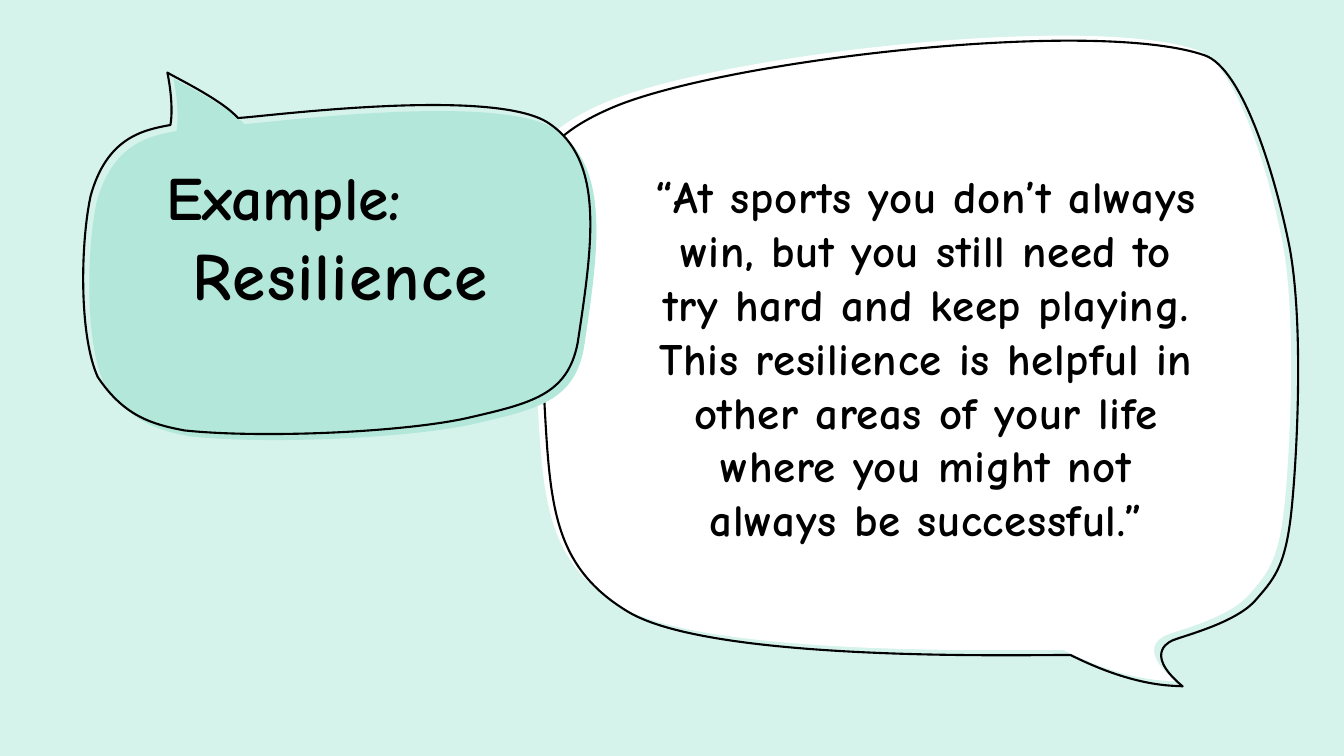
from dataclasses import dataclass
from math import cos, radians, sin

from lxml.etree import SubElement
from pptx import Presentation
from pptx.dml.color import RGBColor
from pptx.enum.text import MSO_ANCHOR, PP_ALIGN
from pptx.oxml.ns import qn
from pptx.util import Inches, Pt


@dataclass(frozen=True)
class Theme:
    font: str = "Comic Neue"
    ink: RGBColor = RGBColor(0, 0, 0)
    backdrop: RGBColor = RGBColor(0xD5, 0xF2, 0xEB)
    paper: RGBColor = RGBColor(255, 255, 255)
    mint: RGBColor = RGBColor(0xB2, 0xE7, 0xDA)
    label_size: int = 44
    title_size: int = 48
    quote_size: int = 32
    outline: float = 1.5


theme = Theme()

# Grid: square cells, 13.33 columns by 7.5 rows
CELL = Inches(1)
COLUMNS, ROWS = 13.33, 7.5

# Bubble outlines: a start point, then two handles and an end point per curve
QUOTE_BUBBLE = [
    (11.57, 6.3),
    (11.7, 6.25), (12.17, 6.13), (12.37, 5.92),
    (12.56, 5.7), (12.68, 5.59), (12.74, 5.01),
    (12.8, 4.42), (12.86, 3.15), (12.72, 2.4),
    (12.57, 1.65), (12.25, 0.63), (11.88, 0.5),
    (10.79, 0.12), (7.09, 0.55), (6, 1.02),
    (4.9, 1.49), (5.2, 2.06), (5.29, 3.31),
    (5.4, 4.74), (5.28, 5.49), (6.16, 6.02),
    (7.03, 6.54), (10.32, 6.44), (10.55, 6.45),
    (11.21, 6.78), (11.59, 6.75), (11.66, 6.76),
    (11.24, 6.41), (11.57, 6.3), (11.57, 6.3),
]
TITLE_BUBBLE = [
    (1.72, 0.78),
    (1.8, 0.83), (2.26, 1.05), (2.42, 1.23),
    (2.58, 1.23), (4.94, 0.91), (5.5, 1.28),
    (6.06, 1.65), (5.94, 2.47), (5.79, 3.46),
    (5.69, 3.98), (5.33, 4.06), (4.68, 4.21),
    (4.03, 4.35), (2.65, 4.41), (1.89, 4.33),
    (1.57, 4.27), (1.29, 4.19), (1.03, 3.8),
    (0.84, 3.38), (0.86, 2.46), (0.96, 2),
    (1.12, 1.43), (1.47, 1.35), (1.75, 1.3),
    (1.75, 1.3), (1.79, 1.13), (1.72, 0.78),
]


def add_bubble(page, curves, frame, tilt, fill, shift):
    """Draw a filled bubble in a tilted frame, then its ink outline moved by shift."""
    left, top, width, height = frame
    wide, high = int(width * CELL), int(height * CELL)
    turn = radians(-tilt)

    for color, (right, down) in ((fill, (0, 0)), (None, shift)):
        builder = page.shapes.build_freeform(0, 0)
        builder.add_line_segments([(wide, 0), (wide, high), (0, high)])
        bubble = builder.convert_to_shape(int((left + right) * CELL), int((top + down) * CELL))
        bubble.rotation = tilt
        bubble.shadow.inherit = False

        # Replace the frame's straight sides by curves, turned back into the frame
        contour = bubble._element.find(".//" + qn("a:path"))
        for side in list(contour):
            contour.remove(side)
        for index, (x, y) in enumerate(curves):
            if index == 0:
                segment = SubElement(contour, qn("a:moveTo"))
            elif index % 3 == 1:
                segment = SubElement(contour, qn("a:cubicBezTo"))
            across, along = x - left - width / 2, y - top - height / 2
            point = SubElement(segment, qn("a:pt"))
            point.set("x", str(int((across * cos(turn) - along * sin(turn) + width / 2) * CELL)))
            point.set("y", str(int((across * sin(turn) + along * cos(turn) + height / 2) * CELL)))
        SubElement(contour, qn("a:close"))

        if color is None:
            bubble.fill.background()
            bubble.line.color.rgb = theme.ink
            bubble.line.width = Pt(theme.outline)
        else:
            bubble.fill.solid()
            bubble.fill.fore_color.rgb = color
            bubble.line.fill.background()


def add_words(page, words, cells, size, align, anchor, spacing=0, before=0):
    """Write one bold paragraph in a box given in grid cells."""
    box = page.shapes.add_textbox(*(int(cell * CELL) for cell in cells))
    box.text_frame.word_wrap = True
    box.text_frame.vertical_anchor = anchor
    paragraph = box.text_frame.paragraphs[0]
    paragraph.alignment = align
    paragraph.space_before = Pt(before)
    paragraph.font.name = theme.font
    paragraph.font.size = Pt(size)
    paragraph.font.bold = True
    paragraph.font.color.rgb = theme.ink
    span = paragraph.add_run()
    span.text = words
    # Letter spacing is held in hundredths of a point
    span.font._element.set("spc", str(int(spacing * 100)))


# Page and background
deck = Presentation()
deck.slide_width, deck.slide_height = int(COLUMNS * CELL), int(ROWS * CELL)
page = deck.slides.add_slide(deck.slide_layouts[6])
page.background.fill.solid()
page.background.fill.fore_color.rgb = theme.backdrop

# Speech bubbles, the title one in front
add_bubble(page, QUOTE_BUBBLE, (5.25, 0.41, 7.56, 6.46), 357.5, theme.paper, (0.07, 0.05))
add_bubble(page, TITLE_BUBBLE, (0.85, 0.64, 5.09, 3.72), 354.9, theme.mint, (-0.06, -0.06))

# Title, quote and label
add_words(page, "Resilience", (1.33, 1.57, 4.09, 2.28), theme.title_size,
          PP_ALIGN.CENTER, MSO_ANCHOR.MIDDLE, spacing=1)
add_words(page, "“At sports you don’t always win, but you still need to try hard "
          "and keep playing. This resilience is helpful in other areas of your life "
          "where you might not always be successful.”",
          (6.4, 1.24, 5.58, 4.61), theme.quote_size,
          PP_ALIGN.CENTER, MSO_ANCHOR.MIDDLE, spacing=0.5, before=10)
add_words(page, "Example:", (1.55, 1.53, 3.64, 0.84), theme.label_size,
          PP_ALIGN.LEFT, MSO_ANCHOR.TOP)

deck.save("out.pptx")
